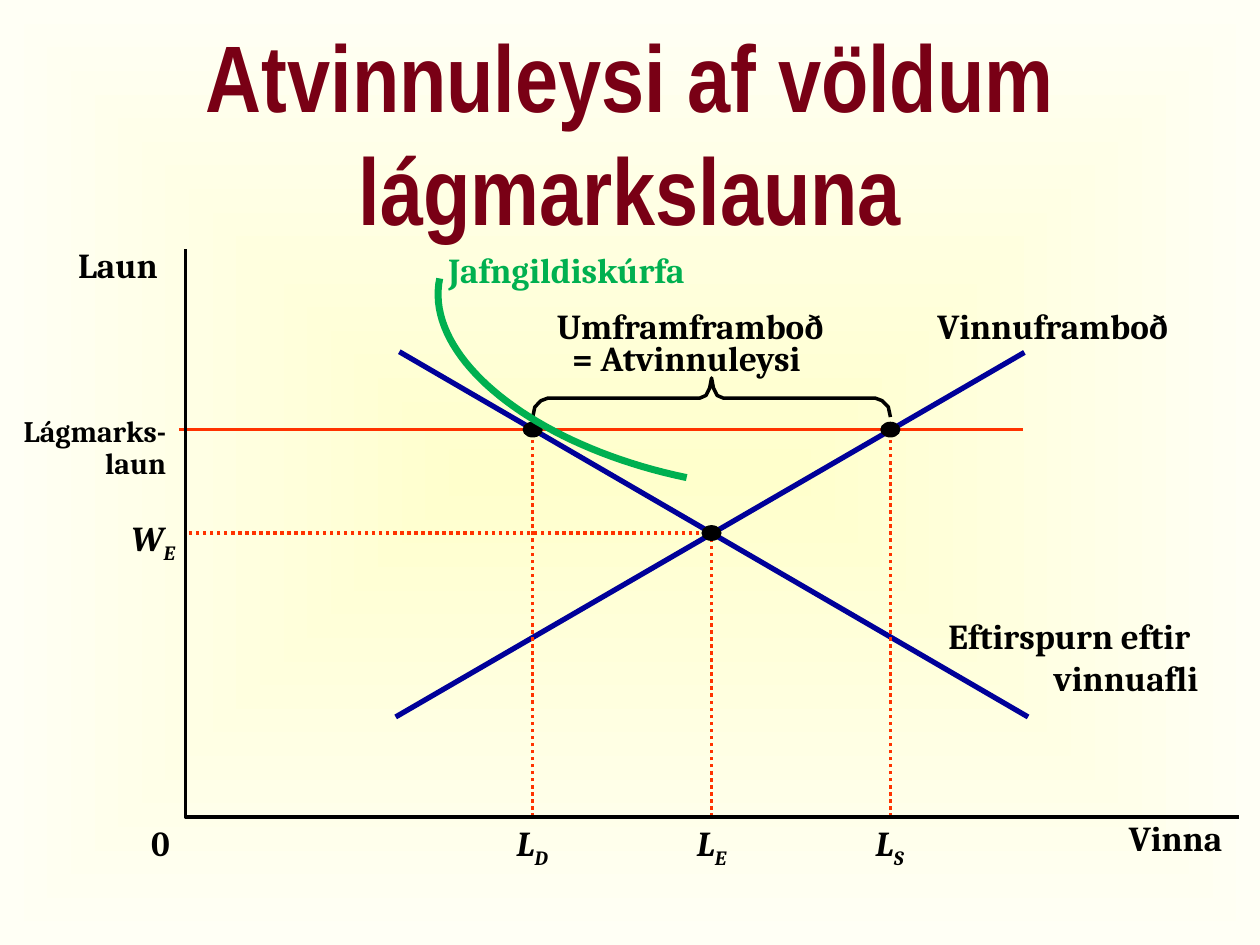
from lxml.etree import SubElement
from pptx import Presentation
from pptx.dml.color import RGBColor
from pptx.enum.dml import MSO_LINE_DASH_STYLE as Dash
from pptx.enum.shapes import MSO_CONNECTOR as Connector, MSO_SHAPE as Shape
from pptx.enum.text import MSO_ANCHOR as Anchor, MSO_AUTO_SIZE as AutoSize, PP_ALIGN as Align
from pptx.oxml.ns import qn
from pptx.util import Pt

COLORS = {"title": "790015", "ink": "000000", "wage": "FF3300", "market": "000099",
          "isoquant": "00B050", "center": "FFFFCC", "edge": "FFFFF5"}


class Diagram:
    """Draws styled text, lines, curves and dots on one slide."""

    def __init__(self, slide):
        self.slide = slide
        self.shapes = slide.shapes

    def color(self, key):
        return RGBColor.from_string(COLORS[key])

    def background(self):
        fill = self.slide.background.fill
        fill.gradient()
        for stop, key in zip(fill.gradient_stops, ("center", "edge")):
            stop.color.rgb = self.color(key)
        gradient = self.slide.element.find(".//" + qn("a:gradFill"))
        gradient.remove(gradient.find(qn("a:lin")))
        shade = SubElement(gradient, qn("a:path"), {"path": "shape"})
        SubElement(shade, qn("a:fillToRect"), dict.fromkeys("ltrb", "50000"))

    def text(self, box, lines, subscript="", size=20, font="Cambria", color="ink",
             align=Align.LEFT, wrap=False, spacing=None, inset=(0, 0),
             anchor=Anchor.TOP, fit=AutoSize.SHAPE_TO_FIT_TEXT):
        frame = self.shapes.add_textbox(*map(Pt, box)).text_frame
        frame.word_wrap = wrap
        frame.auto_size = fit
        frame.vertical_anchor = anchor
        frame.margin_left = frame.margin_right = Pt(inset[0])
        frame.margin_top = frame.margin_bottom = Pt(inset[1])
        paragraph = frame.paragraphs[0]
        paragraph.text = lines
        paragraph.alignment = align
        paragraph.line_spacing = spacing
        style = paragraph.font
        style.name, style.size, style.bold = font, Pt(size), True
        style.italic = bool(subscript)
        style.color.rgb = self.color(color)
        if subscript:
            index = paragraph.add_run()
            index.text = subscript
            index.font._element.set("baseline", "-25000")

    def stroke(self, shape, color, width, dotted):
        shape.line.color.rgb = self.color(color)
        shape.line.width = Pt(width)
        if dotted:
            shape.line.dash_style = Dash.ROUND_DOT

    def line(self, start, end, color, width=2, dotted=False):
        line = self.shapes.add_connector(Connector.STRAIGHT, *map(Pt, start + end))
        SubElement(line._element.spPr, qn("a:effectLst"))
        self.stroke(line, color, width, dotted)

    def outline(self, points, color="ink", width=2, dotted=False):
        first, *rest = [(Pt(x), Pt(y)) for x, y in points]
        builder = self.shapes.build_freeform(*first)
        builder.add_line_segments(rest, close=False)
        outline = builder.convert_to_shape()
        outline.shadow.inherit = False
        outline.fill.background()
        self.stroke(outline, color, width, dotted)

    def curve(self, controls, color, width, steps=40):
        points = []
        for step in range(steps + 1):
            t = step / steps
            weights = ((1 - t) ** 3, 3 * t * (1 - t) ** 2, 3 * t * t * (1 - t), t ** 3)
            points.append([sum(w * c for w, c in zip(weights, axis)) for axis in zip(*controls)])
        self.outline(points, color, width)

    def dot(self, x, y, width=11.5, height=9):
        dot = self.shapes.add_shape(Shape.OVAL, Pt(x - width / 2), Pt(y - height / 2),
                                    Pt(width), Pt(height))
        dot.shadow.inherit = False
        dot.fill.solid()
        dot.fill.fore_color.rgb = self.color("ink")
        dot.line.fill.background()


def main():
    deck = Presentation()
    deck.slide_width, deck.slide_height = Pt(720), Pt(540)
    diagram = Diagram(deck.slides.add_slide(deck.slide_layouts[6]))
    diagram.background()

    axis_x, axis_y = 106, 466.7
    minimum_wage, equilibrium_wage = 245.5, 304.6
    demanded, equilibrium, supplied = 304.4, 406.6, 508.8
    label_y = 469.5

    diagram.text((54, 30, 612, 90), "Atvinnuleysi af völdum lágmarkslauna", size=54,
                 font="Arial Narrow", color="title", align=Align.CENTER, wrap=True,
                 inset=(7.2, 3.6), anchor=Anchor.MIDDLE, fit=AutoSize.NONE)

    diagram.text((75, 295.2, 26.5, 24.5), "W", "E")
    diagram.text((592.5, label_y, 106, 21.6), "Vinna", align=Align.RIGHT, wrap=True, spacing=0.9)
    diagram.text((86.4, label_y, 12, 24.5), "0")
    diagram.text((539.3, 351.4, 145.4, 48.2), "Eftirspurn eftir \vvinnuafli", align=Align.RIGHT)
    diagram.text((44.6, 139, 46, 24.5), "Laun")
    diagram.outline([(equilibrium, axis_y), (equilibrium, equilibrium_wage),
                     (axis_x, equilibrium_wage)], "wage", dotted=True)

    diagram.text((318.2, 174.2, 164.2, 24.5), "Umframframboð")
    diagram.text((327, 192.2, 132.5, 24.5), "= Atvinnuleysi")
    half_brace = [(0, 216), (1.1, 221.8), (3.2, 226), (6.7, 227.5),
                  (93.5, 227.5), (97.5, 229), (101, 232.6), (102.2, 238.3)]
    diagram.outline([(equilibrium - x, y) for x, y in reversed(half_brace)]
                    + [(equilibrium + x, y) for x, y in half_brace[1:]])

    diagram.text((0, 238.3, 95, 36.7), "Lágmarks-laun", size=17, align=Align.RIGHT,
                 wrap=True, spacing=0.9)
    diagram.line((102.2, minimum_wage), (584.6, minimum_wage), "wage")
    diagram.line((226.1, 409.7), (585.4, 201.4), "market", 3)
    diagram.line((587.5, 409.7), (228.2, 201), "market", 3)

    diagram.dot(equilibrium, equilibrium_wage)
    for labor in (demanded, supplied):
        diagram.line((labor, axis_y), (labor, minimum_wage), "wage", dotted=True)
        diagram.dot(labor, minimum_wage)
    for left, width, subscript in ((295.2, 23, "D"), (398.2, 18, "E"), (500.4, 20, "S")):
        diagram.text((left, label_y, width, 24.5), "L", subscript)

    diagram.outline([(axis_x, 142.4), (axis_x, axis_y), (707.8, axis_y)])
    diagram.text((535.7, 174.2, 134.6, 24.5), "Vinnuframboð")
    diagram.curve([(392.4, 272.9), (305.3, 254.9), (241.9, 204.5), (251.3, 159.1)], "isoquant", 4)
    diagram.text((249.1, 138.2, 152, 31.7), "Jafngildiskúrfa", color="isoquant", inset=(7.2, 3.6))

    deck.save("out.pptx")


if __name__ == "__main__":
    main()
